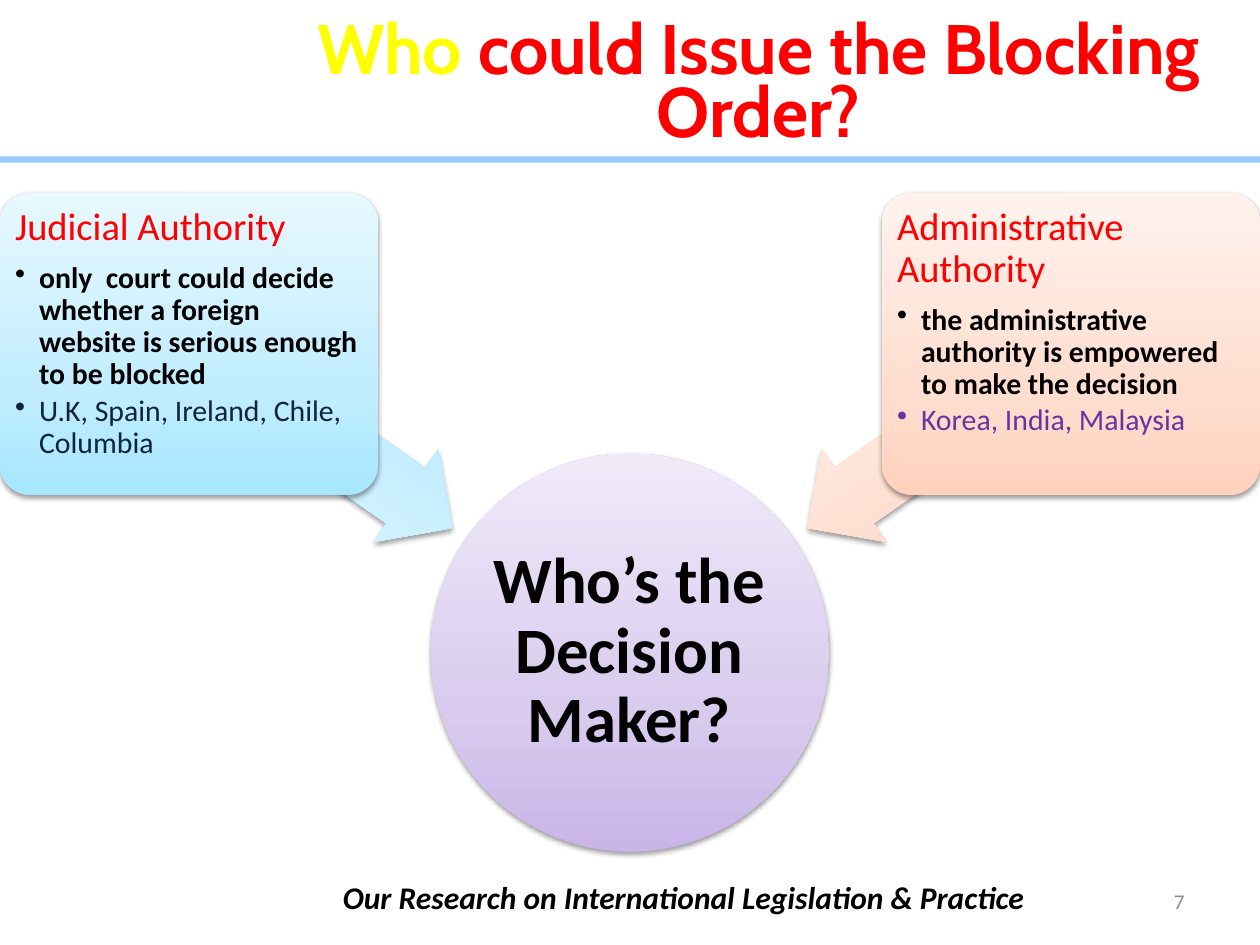
from lxml import etree
from pptx import Presentation
from pptx.dml.color import RGBColor
from pptx.enum.shapes import MSO_SHAPE
from pptx.enum.text import MSO_ANCHOR, PP_ALIGN
from pptx.oxml.ns import qn
from pptx.util import Inches, Pt

RECTANGLE, CIRCLE = MSO_SHAPE.RECTANGLE, MSO_SHAPE.OVAL
CARD, ARROW = MSO_SHAPE.ROUNDED_RECTANGLE, MSO_SHAPE.LEFT_ARROW
TOP, MIDDLE, BOTTOM = MSO_ANCHOR.TOP, MSO_ANCHOR.MIDDLE, MSO_ANCHOR.BOTTOM
LEFT, CENTER, RIGHT = PP_ALIGN.LEFT, PP_ALIGN.CENTER, PP_ALIGN.RIGHT

BLACK = RGBColor(0x00, 0x00, 0x00)
RED = RGBColor(0xFF, 0x00, 0x00)
YELLOW = RGBColor(0xFF, 0xFF, 0x00)
NAVY = RGBColor(0x0F, 0x24, 0x3E)
PURPLE = RGBColor(0x70, 0x30, 0xA0)
GRAY = RGBColor(0x8C, 0x8C, 0x8C)
SKY = RGBColor(0x99, 0xCC, 0xFF)
LILACS = RGBColor(0xC9, 0xB5, 0xE8), RGBColor(0xD8, 0xCB, 0xEE), RGBColor(0xF0, 0xEA, 0xF9)
BLUES = RGBColor(0xA7, 0xE6, 0xFF), RGBColor(0xC1, 0xED, 0xFF), RGBColor(0xE7, 0xF8, 0xFF)
PEACHES = RGBColor(0xFF, 0xD2, 0xBD), RGBColor(0xFF, 0xDE, 0xD0), RGBColor(0xFF, 0xF2, 0xED)
GRADIENT_STOPS = 0, 35, 100

SLIDE_WIDTH = 10
CARD_WIDTH, CARD_HEIGHT, CARD_TOP = 3, 2.4, 1.53
ARROW_WIDTH, ARROW_INSET = 2.55, 1.27


class SlideBuilder:
    """Draws the elements of one slide in a shared style."""

    def __init__(self, slide, body_font="Calibri", title_font="Cabin"):
        self.shapes = slide.shapes
        self.body_font = body_font
        self.title_font = title_font

    def solid(self, kind, left, top, width, height, color):
        shape = self.shapes.add_shape(
            kind, Inches(left), Inches(top), Inches(width), Inches(height))
        shape.fill.solid()
        shape.fill.fore_color.rgb = color
        shape.line.fill.background()
        shape.shadow.inherit = False
        return shape

    def glossy(self, kind, left, top, width, height, colors, adjustments=(), rotation=0):
        shape = self.solid(kind, left, top, width, height, colors[0])
        shape.rotation = rotation
        for index, value in enumerate(adjustments):
            shape.adjustments[index] = value
        shape.fill.gradient()
        shape.fill.gradient_angle = 90
        properties = shape.element.spPr
        stops = properties.find(f"{qn('a:gradFill')}/{qn('a:gsLst')}")
        for stop in list(stops):
            stops.remove(stop)
        for position, color in zip(GRADIENT_STOPS, colors):
            stop = etree.SubElement(stops, qn("a:gs"), pos=str(position * 1000))
            etree.SubElement(stop, qn("a:srgbClr"), val=str(color))
        shadow = etree.SubElement(
            properties.find(qn("a:effectLst")), qn("a:outerShdw"), blurRad=str(Pt(3.1)),
            dist=str(Pt(1.6)), dir="5400000", rotWithShape="0")
        shade = etree.SubElement(shadow, qn("a:srgbClr"), val=str(BLACK))
        etree.SubElement(shade, qn("a:alpha"), val="38000")

    def text_frame(self, left, top, width, height, anchor=TOP, inset=None):
        frame = self.shapes.add_textbox(
            Inches(left), Inches(top), Inches(width), Inches(height)).text_frame
        frame.word_wrap = True
        frame.vertical_anchor = anchor
        if inset is not None:
            frame.margin_left = frame.margin_right = Inches(inset)
            frame.margin_top = frame.margin_bottom = Inches(inset)
        return frame

    def set_paragraph(self, paragraph, text, size, color, align=LEFT, bold=False,
                      italic=False, spacing=None, after=None):
        paragraph.text = text
        paragraph.alignment = align
        paragraph.line_spacing = spacing
        paragraph.space_after = after
        for run in paragraph.runs:
            self.style(run, self.body_font, size, color, bold, italic)

    def style(self, run, name, size, color, bold, italic=False):
        font = run.font
        font.name, font.size, font.bold, font.italic = name, Pt(size), bold, italic
        font.color.rgb = color

    def title(self, *parts):
        paragraph = self.text_frame(2.24, 0.13, 7.56, 1.12, BOTTOM).paragraphs[0]
        paragraph.alignment = CENTER
        paragraph.line_spacing = Pt(36)
        for text, color in parts:
            run = paragraph.add_run()
            run.text = text
            self.style(run, self.title_font, 40, color, True)

    def bullet(self, frame, text, color, bold):
        paragraph = frame.add_paragraph()
        paragraph.level = 1
        properties = paragraph._p.get_or_add_pPr()
        properties.set("marL", str(Inches(0.19)))
        properties.set("indent", str(Inches(-0.19)))
        etree.SubElement(properties, qn("a:buChar"), char="•")
        self.set_paragraph(paragraph, text, 17, color, bold=bold, spacing=0.9, after=Pt(2.5))

    def authority(self, left, arrow_left, rotation, colors, heading, rule, countries, accent):
        self.glossy(ARROW, arrow_left, 3.01, ARROW_WIDTH, 0.9, colors, (0.6, 0.5), rotation)
        self.glossy(CARD, left, CARD_TOP, CARD_WIDTH, CARD_HEIGHT, colors, (0.1,))
        frame = self.text_frame(
            left + 0.07, CARD_TOP + 0.07, CARD_WIDTH - 0.14, CARD_HEIGHT - 0.14, inset=0.05)
        self.set_paragraph(frame.paragraphs[0], heading, 22, RED, spacing=0.9, after=Pt(7.7))
        self.bullet(frame, rule, BLACK, True)
        self.bullet(frame, countries, accent, False)

    def question(self, text):
        self.glossy(CIRCLE, 3.42, 3.6, 3.16, 3.16, LILACS)
        frame = self.text_frame(3.88, 4.06, 2.23, 2.23, MIDDLE, 0.03)
        self.set_paragraph(frame.paragraphs[0], text, 37, BLACK, CENTER, bold=True, spacing=0.9)


def main():
    presentation = Presentation()
    presentation.slide_width = Inches(SLIDE_WIDTH)
    presentation.slide_height = Inches(7.5)
    builder = SlideBuilder(presentation.slides.add_slide(presentation.slide_layouts[6]))

    builder.solid(RECTANGLE, -0.04, 1.24, 10.06, 0.05, SKY)
    builder.question("Who’s the Decision Maker?")
    builder.authority(
        0, ARROW_INSET, 215, BLUES, "Judicial Authority",
        "only  court could decide whether a foreign website is serious enough to be blocked",
        "U.K, Spain, Ireland, Chile, Columbia", NAVY)
    builder.authority(
        SLIDE_WIDTH - CARD_WIDTH, SLIDE_WIDTH - ARROW_INSET - ARROW_WIDTH, 325, PEACHES,
        "Administrative Authority",
        "the administrative authority is empowered to make the decision",
        "Korea, India, Malaysia", PURPLE)
    builder.title(("Who", YELLOW), (" could Issue the Blocking Order?", RED))

    footer = builder.text_frame(-1.14, 6.92, 9.37, 0.4)
    builder.set_paragraph(
        footer.paragraphs[0], "Our Research on International Legislation & Practice",
        18, BLACK, RIGHT, bold=True, italic=True)
    page_number = builder.text_frame(7.17, 6.95, 2.33, 0.4, MIDDLE)
    builder.set_paragraph(page_number.paragraphs[0], "7", 12, GRAY, RIGHT)

    presentation.save("out.pptx")


if __name__ == "__main__":
    main()
